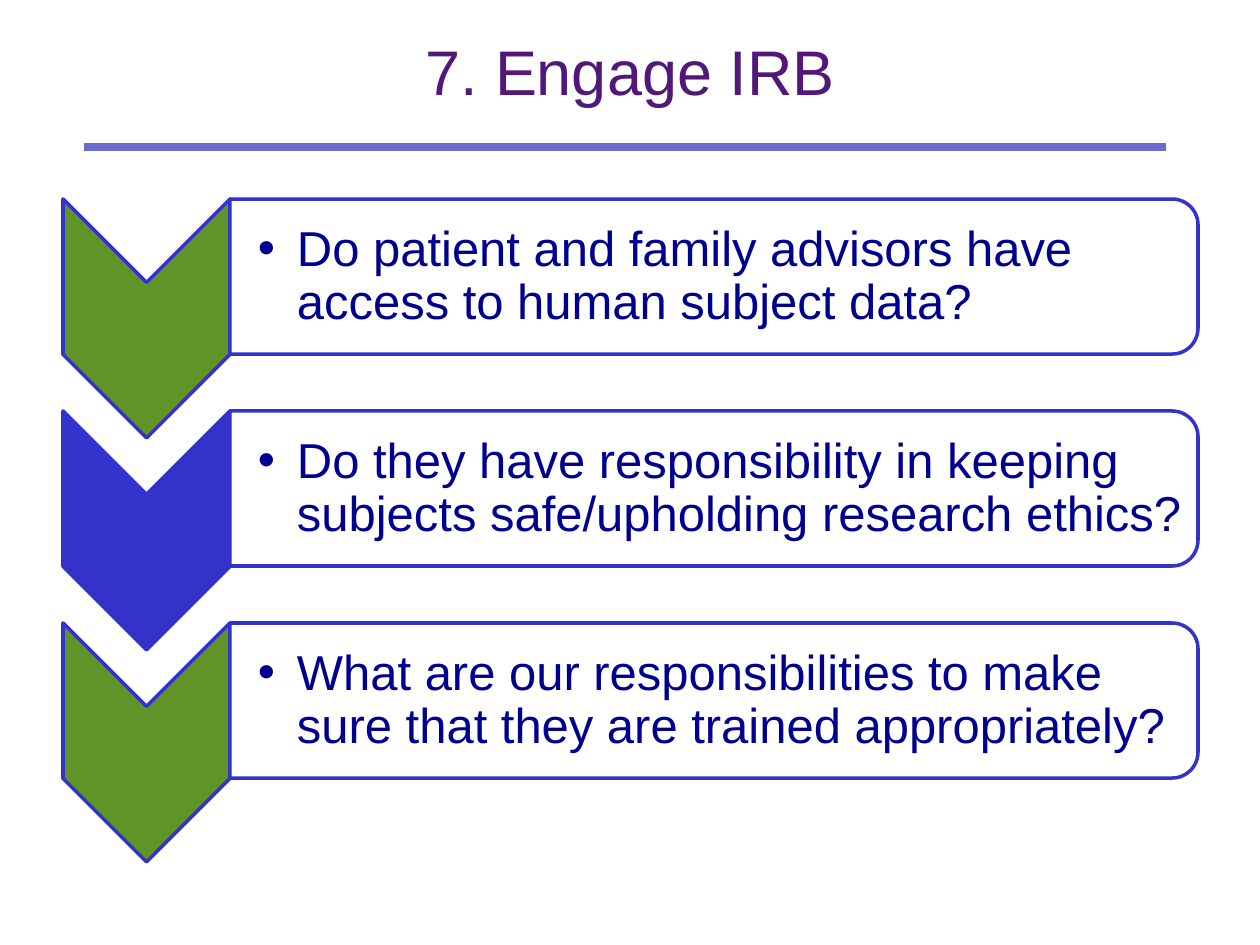
from dataclasses import dataclass

from lxml import etree
from pptx import Presentation, util as u
from pptx.dml.color import RGBColor
from pptx.enum import shapes, text
from pptx.oxml import ns

PX = 914400 / 126
COLORS = {
    "title": "511879",
    "rule": "6B6BCF",
    "green": "619428",
    "blue": "3333CC",
    "body": "000090",
    "white": "FFFFFF",
}
FIRST_TOP, STEP = 199, 212
CHEVRON_LEFT, CHEVRON_W, CHEVRON_H = 63, 167, 239
PANEL_LEFT, PANEL_W, PANEL_H = 230, 968, 155


@dataclass
class Step:
    question: str
    color: str


STEPS = [
    Step("Do patient and family advisors have access to human subject data?", "green"),
    Step("Do they have responsibility in keeping subjects safe/upholding research ethics?", "blue"),
    Step("What are our responsibilities to make sure that they are trained appropriately?", "green"),
]


def px(n: float) -> u.Emu:
    return u.Emu(round(n * PX))


def rgb(name: str) -> RGBColor:
    return RGBColor.from_string(COLORS[name])


def add_bullet(p, indent: int) -> None:
    pPr = p._p.get_or_add_pPr()
    pPr.set("marL", str(px(indent)))
    pPr.set("indent", str(-px(indent)))
    etree.SubElement(pPr, ns.qn("a:buFont")).set("typeface", "Arial")
    etree.SubElement(pPr, ns.qn("a:buChar")).set("char", "•")


def add_text(s, words: str, x: int, y: int, w: int, h: int, *, size: int, color: str,
             spacing: float, insets=(13, 6, 13, 6), align=text.PP_ALIGN.LEFT,
             anchor=text.MSO_ANCHOR.TOP, indent: int = 0) -> None:
    tf = s.shapes.add_textbox(px(x), px(y), px(w), px(h)).text_frame
    tf.word_wrap = True
    tf.vertical_anchor = anchor
    tf.margin_left, tf.margin_top, tf.margin_right, tf.margin_bottom = map(px, insets)
    p = tf.paragraphs[0]
    p.alignment = align
    p.line_spacing = spacing
    if indent:
        add_bullet(p, indent)
    r = p.add_run()
    r.text = words
    r.font.name = "Arial"
    r.font.size = u.Pt(size)
    r.font.color.rgb = rgb(color)


def add_turned_shape(s, kind, x: int, y: int, w: int, h: int, fill: str):
    """Add a shape turned a quarter clockwise that covers the given area."""
    left, top = x + (w - h) / 2, y + (h - w) / 2
    sp = s.shapes.add_shape(kind, px(left), px(top), px(h), px(w))
    sp.rotation = 90
    sp.shadow.inherit = False
    sp.fill.solid()
    sp.fill.fore_color.rgb = rgb(fill)
    sp.line.color.rgb = rgb("blue")
    sp.line.width = u.Pt(2)
    return sp


def add_step(s, step: Step, top: int) -> None:
    add_turned_shape(s, shapes.MSO_SHAPE.CHEVRON, CHEVRON_LEFT, top,
                     CHEVRON_W, CHEVRON_H, step.color)
    panel = add_turned_shape(s, shapes.MSO_SHAPE.ROUND_2_SAME_RECTANGLE, PANEL_LEFT, top,
                             PANEL_W, PANEL_H, "white")
    fill = panel._element.spPr.find(ns.qn("a:solidFill"))
    etree.SubElement(fill[0], ns.qn("a:alpha")).set("val", "90000")
    add_text(s, step.question, PANEL_LEFT, top + 8, PANEL_W - 8, PANEL_H - 15,
             size=28, color="body", spacing=0.9, insets=(28, 3, 3, 3),
             anchor=text.MSO_ANCHOR.MIDDLE, indent=39)


def main() -> None:
    prs = Presentation()
    prs.slide_width, prs.slide_height = px(1260), px(945)
    s = prs.slides.add_slide(prs.slide_layouts[6])

    # Title and rule
    add_text(s, "7. Engage IRB", 63, 38, 1134, 157, size=36, color="title",
             spacing=0.85, align=text.PP_ALIGN.CENTER)
    rule = s.shapes.add_connector(shapes.MSO_CONNECTOR.STRAIGHT,
                                  px(84), px(147), px(1166), px(147))
    rule.line.color.rgb = rgb("rule")
    rule.line.width = u.Pt(4.5)
    etree.SubElement(rule._element.spPr, ns.qn("a:effectLst"))

    # Chevron list
    for i, step in enumerate(STEPS):
        add_step(s, step, FIRST_TOP + i * STEP)

    prs.save("out.pptx")


if __name__ == "__main__":
    main()
